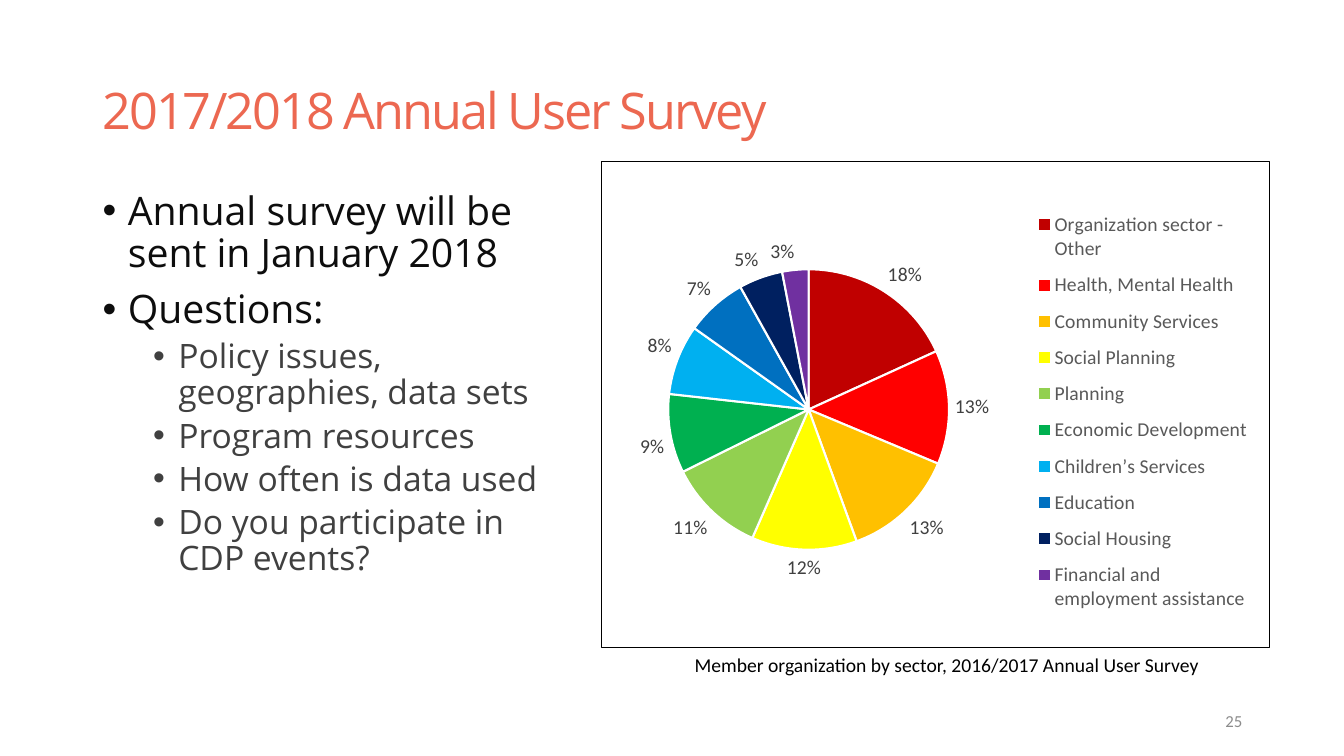
from lxml import etree
from pptx import Presentation
from pptx.chart.data import CategoryChartData
from pptx.dml.color import RGBColor
from pptx.enum.chart import XL_CHART_TYPE, XL_LABEL_POSITION, XL_LEGEND_POSITION
from pptx.enum.text import MSO_ANCHOR, PP_ALIGN
from pptx.oxml import parse_xml
from pptx.oxml.ns import nsdecls, qn
from pptx.util import Inches, Pt

PIE = XL_CHART_TYPE.PIE
OUTSIDE = XL_LABEL_POSITION.OUTSIDE_END
RIGHT_LEGEND = XL_LEGEND_POSITION.RIGHT
TOP, MIDDLE = MSO_ANCHOR.TOP, MSO_ANCHOR.MIDDLE
LEFT, RIGHT = PP_ALIGN.LEFT, PP_ALIGN.RIGHT

# Content
COLORS = {"title": "EC6851", "body": "0D0D0D", "detail": "404040", "legend": "595959",
          "number": "8C8C8C", "black": "000000", "white": "FFFFFF"}
TITLE = "2017/2018 Annual User Survey"
BULLETS = [
    (0, "Annual survey will be sent in January 2018"),
    (0, "Questions:"),
    (1, "Policy issues, geographies, data sets"),
    (1, "Program resources"),
    (1, "How often is data used"),
    (1, "Do you participate in CDP events?"),
]
SECTORS = [
    ("Organization sector - Other", 18, "C00000"),
    ("Health, Mental Health", 13, "FF0000"),
    ("Community Services", 13, "FFC000"),
    ("Social Planning", 12, "FFFF00"),
    ("Planning", 11, "92D050"),
    ("Economic Development", 9, "00B050"),
    ("Children’s Services", 8, "00B0F0"),
    ("Education", 7, "0070C0"),
    ("Social Housing", 5, "002060"),
    ("Financial and employment assistance", 3, "7030A0"),
]
CAPTION = "Member organization by sector, 2016/2017 Annual User Survey"
PAGE_NUMBER = "25"

# Format by bullet level
LEVELS = [
    {"size": 28, "color": "body", "margin": 0.25, "before": 10},
    {"size": 24, "color": "detail", "margin": 0.75, "before": 5},
]
HANGING = 0.25
PLOT_LAYOUT = {"x": 0.1, "y": 0.22, "w": 0.42, "h": 0.58}
LEGEND_LAYOUT = {"x": 0.64, "y": 0.08, "w": 0.34, "h": 0.87}


def set_font(font, name, size, color):
    for attribute, value in {"name": name, "size": Pt(size), "bold": False}.items():
        setattr(font, attribute, value)
    font.color.rgb = RGBColor.from_string(COLORS[color])


def add_text_frame(slide, box, anchor=TOP, wrap=True):
    frame = slide.shapes.add_textbox(*map(Inches, box)).text_frame
    frame.word_wrap = wrap
    frame.vertical_anchor = anchor
    return frame


def add_line(slide, box, text, font, anchor=MIDDLE, wrap=True, align=LEFT):
    paragraph = add_text_frame(slide, box, anchor, wrap).paragraphs[0]
    paragraph.alignment = align
    run = paragraph.add_run()
    run.text = text
    set_font(run.font, *font)
    return paragraph


def add_bullets(slide, box):
    frame = add_text_frame(slide, box)
    for index, (level, text) in enumerate(BULLETS):
        style = LEVELS[level]
        paragraph = frame.add_paragraph() if index else frame.paragraphs[0]
        paragraph.level = level
        paragraph.line_spacing = 0.9
        paragraph.space_before = Pt(style["before"] if index else 0)
        properties = paragraph._p.get_or_add_pPr()
        properties.set("marL", str(Inches(style["margin"])))
        properties.set("indent", str(-Inches(HANGING)))
        etree.SubElement(properties, qn("a:buFont"), typeface="Arial")
        etree.SubElement(properties, qn("a:buChar"), char="•")
        run = paragraph.add_run()
        run.text = text
        set_font(run.font, "Open Sans", style["size"], style["color"])


def chart_layout(fractions, inner=False):
    target = '<c:layoutTarget val="inner"/>' if inner else ""
    modes = "".join(f'<c:{key}Mode val="edge"/>' for key in "xy")
    values = "".join(f'<c:{key} val="{value}"/>' for key, value in fractions.items())
    return parse_xml(f'<c:layout {nsdecls("c")}><c:manualLayout>{target}{modes}{values}'
                     '</c:manualLayout></c:layout>')


def add_sector_chart(slide, box):
    data = CategoryChartData()
    data.categories = [name for name, _, _ in SECTORS]
    data.add_series("Series 1", [share for _, share, _ in SECTORS])
    chart = slide.shapes.add_chart(PIE, *map(Inches, box), data).chart
    chart.has_title = False
    set_font(chart.font, "Calibri", 10, "black")

    # Slices and percentages
    plot = chart.plots[0]
    plot.vary_by_categories = True
    for index, (_, _, color) in enumerate(SECTORS):
        slice_format = plot.series[0].points[index].format
        slice_format.fill.solid()
        slice_format.fill.fore_color.rgb = RGBColor.from_string(color)
        slice_format.line.color.rgb = RGBColor.from_string(COLORS["white"])
        slice_format.line.width = Pt(1.5)
    labels = plot.series[0].data_labels
    label_format = {"show_percentage": True, "show_value": False, "number_format": "0%",
                    "number_format_is_linked": False, "position": OUTSIDE}
    for attribute, value in label_format.items():
        setattr(labels, attribute, value)
    set_font(labels.font, "Calibri", 14, "detail")

    # Legend
    chart.has_legend = True
    legend = chart.legend
    legend.position = RIGHT_LEGEND
    legend.include_in_layout = False
    set_font(legend.font, "Calibri", 14, "legend")

    # Placement inside the frame
    for element in (legend._element, chart._chartSpace.chart.plotArea):
        for layout in element.findall(qn("c:layout")):
            element.remove(layout)
    legend._element.find(qn("c:legendPos")).addnext(chart_layout(LEGEND_LAYOUT))
    chart._chartSpace.chart.plotArea.insert(0, chart_layout(PLOT_LAYOUT, inner=True))

    # Frame
    chart._chartSpace.chart.addnext(parse_xml(
        f'<c:spPr {nsdecls("c", "a")}><a:noFill/><a:ln w="{Pt(0.75)}"><a:solidFill>'
        f'<a:srgbClr val="{COLORS["black"]}"/></a:solidFill></a:ln></c:spPr>'))


def main():
    presentation = Presentation()
    presentation.slide_width, presentation.slide_height = Inches(13.33), Inches(7.5)
    slide = presentation.slides.add_slide(presentation.slide_layouts[6])

    title = add_line(slide, (0.92, 0.4, 11.5, 1.45), TITLE, ("Open Sans", 36, "title"))
    title.line_spacing = 0.9
    title.runs[0].font._element.set("spc", "-150")
    add_bullets(slide, (0.92, 1.85, 4.68, 4.76))
    add_line(slide, (9.42, 6.95, 3, 0.4), PAGE_NUMBER, ("Calibri", 12, "number"), align=RIGHT)
    add_sector_chart(slide, (5.96, 1.6, 6.64, 4.83))
    add_line(slide, (6.79, 6.43, 5.25, 0.34), CAPTION, ("Calibri", 14, "black"),
             anchor=TOP, wrap=False)
    presentation.save("out.pptx")


if __name__ == "__main__":
    main()
